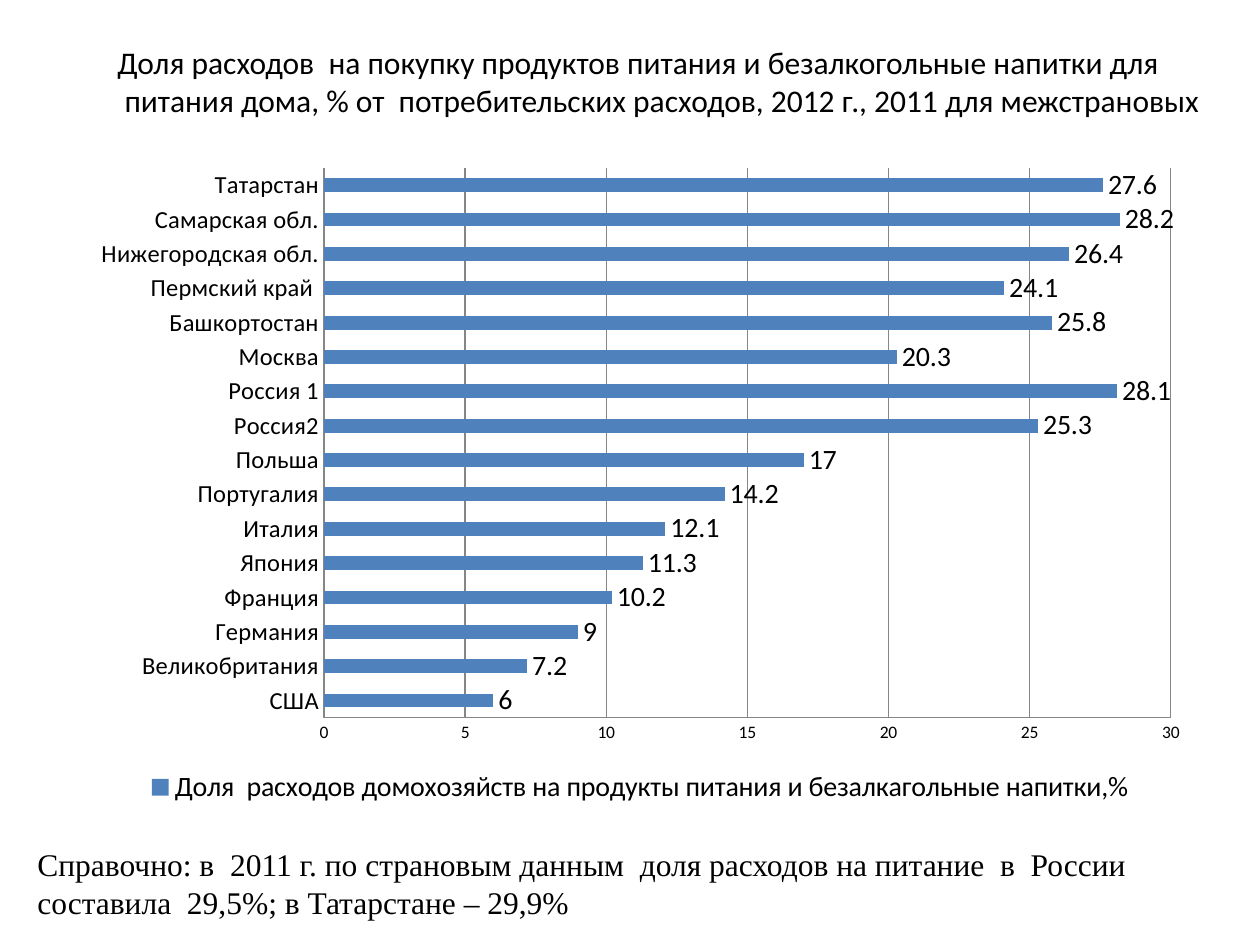
import pptx
import pptx.chart.data
import pptx.dml.color
import pptx.enum.chart
import pptx.util

PX = 914400 // 126
BLACK = pptx.dml.color.RGBColor(0x00, 0x00, 0x00)
BLUE = pptx.dml.color.RGBColor(0x4F, 0x81, 0xBD)
GRAY = pptx.dml.color.RGBColor(0x86, 0x86, 0x86)

HEADING = [
    "Доля расходов  на покупку продуктов питания и безалкогольные напитки для",
    " питания дома, % от  потребительских расходов, 2012 г., 2011 для межстрановых",
]
NOTE = [
    "Справочно: в  2011 г. по страновым данным  доля расходов на питание  в  России "
    "составила  29,5%; в Татарстане – 29,9%",
]
SERIES_NAME = "Доля  расходов домохозяйств на продукты питания и безалкагольные напитки,%"
FOOD_SHARES = {
    "США": 6,
    "Великобритания": 7.2,
    "Германия": 9,
    "Франция": 10.2,
    "Япония": 11.3,
    "Италия": 12.1,
    "Португалия": 14.2,
    "Польша": 17,
    "Россия2": 25.3,
    "Россия 1": 28.1,
    "Москва": 20.3,
    "Башкортостан": 25.8,
    "Пермский край ": 24.1,
    "Нижегородская обл.": 26.4,
    "Самарская обл.": 28.2,
    "Татарстан": 27.6,
}


def px(*lengths):
    return [pptx.util.Emu(length * PX) for length in lengths]


def style_font(font, size, name="Calibri"):
    font.size = pptx.util.Pt(size)
    font.name = name
    font.color.rgb = BLACK


def add_text(slide, box, lines, font_name, wrap):
    frame = slide.shapes.add_textbox(*px(*box)).text_frame
    frame.word_wrap = wrap
    frame.text = "\n".join(lines)
    for paragraph in frame.paragraphs:
        for run in paragraph.runs:
            style_font(run.font, 18, font_name)


def style_axis(axis, size):
    axis.major_tick_mark = pptx.enum.chart.XL_TICK_MARK.NONE
    axis.minor_tick_mark = pptx.enum.chart.XL_TICK_MARK.NONE
    axis.format.line.color.rgb = GRAY
    style_font(axis.tick_labels.font, size)


def add_share_chart(slide, box):
    shares = pptx.chart.data.CategoryChartData()
    shares.categories = list(FOOD_SHARES)
    shares.add_series(SERIES_NAME, list(FOOD_SHARES.values()))
    chart = slide.shapes.add_chart(
        pptx.enum.chart.XL_CHART_TYPE.BAR_CLUSTERED, *px(*box), shares
    ).chart
    style_font(chart.font, 10)
    chart.has_title = False

    style_axis(chart.category_axis, 14)
    chart.category_axis.has_major_gridlines = False
    value_axis = chart.value_axis
    style_axis(value_axis, 10)
    value_axis.minimum_scale = 0
    value_axis.maximum_scale = 30
    value_axis.major_unit = 5
    value_axis.has_major_gridlines = True
    value_axis.major_gridlines.format.line.color.rgb = GRAY

    chart.has_legend = True
    chart.legend.position = pptx.enum.chart.XL_LEGEND_POSITION.BOTTOM
    chart.legend.include_in_layout = False
    style_font(chart.legend.font, 16)

    plot = chart.plots[0]
    plot.gap_width = 150
    plot.vary_by_categories = False
    bars = plot.series[0]
    bars.format.fill.solid()
    bars.format.fill.fore_color.rgb = BLUE
    bars.data_labels.show_value = True
    bars.data_labels.position = pptx.enum.chart.XL_LABEL_POSITION.OUTSIDE_END
    style_font(bars.data_labels.font, 16)


def main():
    deck = pptx.Presentation()
    deck.slide_width, deck.slide_height = px(1260, 945)
    slide = deck.slides.add_slide(deck.slide_layouts[6])
    add_share_chart(slide, (79, 155, 1123, 655))
    add_text(slide, (25, 839, 1150, 89), NOTE, "Times New Roman", wrap=True)
    add_text(slide, (105, 37, 1120, 89), HEADING, "Calibri", wrap=False)
    deck.save("out.pptx")


if __name__ == "__main__":
    main()
